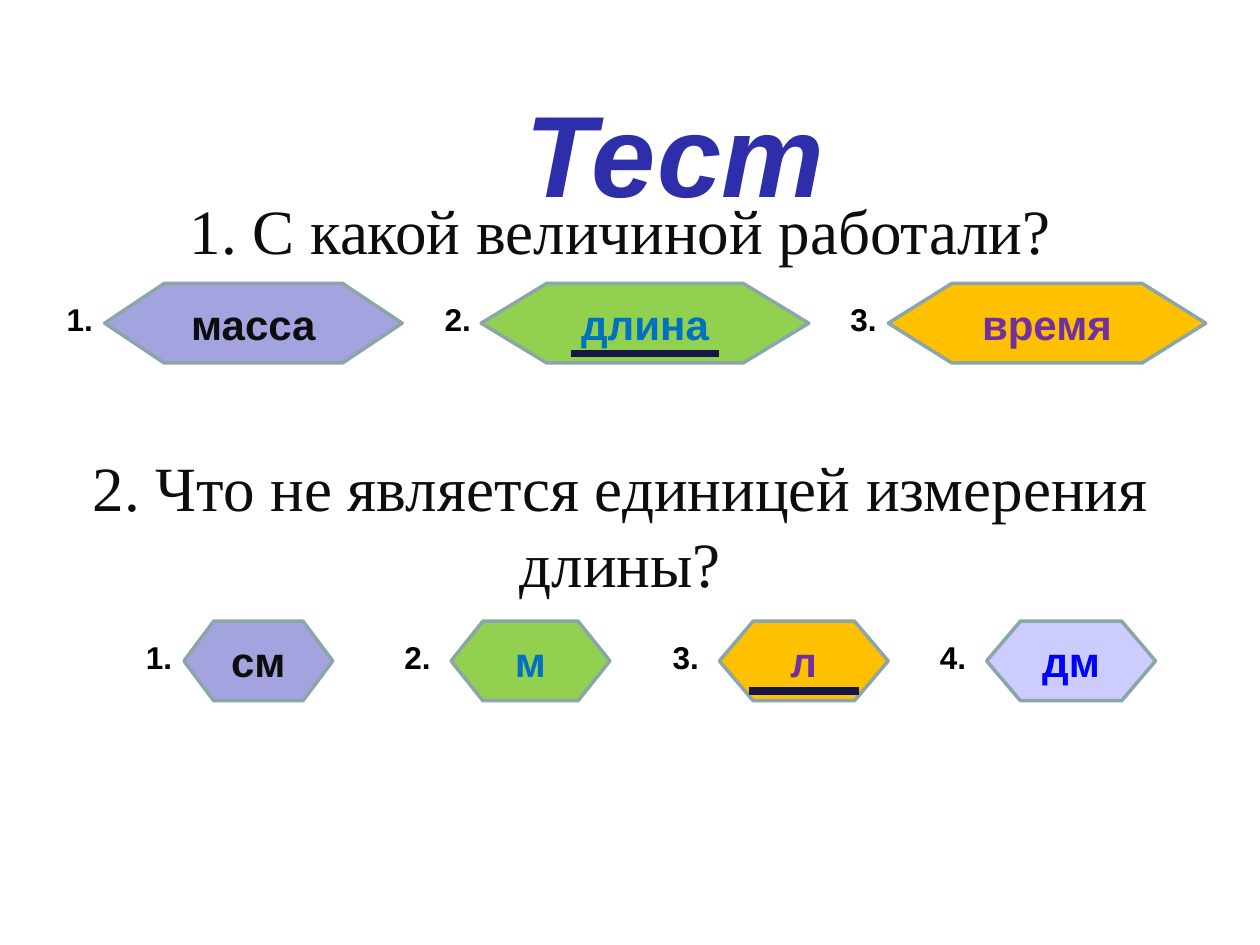
from lxml.etree import SubElement
from pptx import Presentation
from pptx.dml.color import RGBColor
from pptx.enum.shapes import MSO_CONNECTOR, MSO_SHAPE
from pptx.enum.text import MSO_ANCHOR as Anchor, MSO_AUTO_SIZE, PP_ALIGN as Align
from pptx.oxml.ns import qn
from pptx.util import Pt

THEME = {
    "sans": "Arial", "serif": "Times New Roman",
    "title_size": 66, "question_size": 36, "answer_size": 24, "number_size": 18,
    "title": "2E2EAA", "question": "0D0D0D", "number": "000000",
    "outline": "8AA6A8", "underline": "171745",
    "styles": {  # fill, text
        "violet": ("A3A3E0", "0D0D0D"),
        "green": ("92D050", "0070C0"),
        "orange": ("FFC000", "7030A0"),
        "lavender": ("CCCCFF", "0000FF"),
    },
}

TITLE = "Тест"
# Answers: text, style, left, width, number's distance to the left, underline width
QUESTIONS = [
    {"text": "1. С какой величиной работали?", "top": 105.8, "height": 51.1,
     "answers_top": 162,
     "answers": [("масса", "violet", 59.8, 170, 28.8, 0),
                 ("длина", "green", 275, 187.2, 28, 85),
                 ("время", "orange", 507.6, 181.4, 28.8, 0)]},
    {"text": "2. Что не является единицей измерения длины?", "top": 252.7, "height": 94.3,
     "answers_top": 355,
     "answers": [("см", "violet", 105.1, 85, 28.8, 0),
                 ("м", "green", 257.8, 90.7, 33.8, 0),
                 ("л", "orange", 411.1, 96.5, 33.8, 62.6),
                 ("дм", "lavender", 563.8, 96.5, 33.8, 0)]},
]
ANSWER_HEIGHT = 45.4
NUMBER_DROP = 5.8
UNDERLINE_DROP = 40


def color(name):
    return RGBColor.from_string(name)


def write(shape, text, face, size, ink, bold=False, italic=False, align=Align.CENTER):
    shape.text_frame.text = text
    para = shape.text_frame.paragraphs[0]
    para.alignment = align
    font = para.runs[0].font
    font.name, font.size, font.bold, font.italic = face, Pt(size), bold, italic
    font.color.rgb = color(ink)
    return para


def add_box(slide, left, top, width, height):
    box = slide.shapes.add_textbox(Pt(left), Pt(top), Pt(width), Pt(height))
    box.text_frame.word_wrap = True
    box.text_frame.auto_size = MSO_AUTO_SIZE.SHAPE_TO_FIT_TEXT
    return box


def add_title(slide):
    box = add_box(slide, 263.5, 5.8, 244.1, 120.2)
    frame = box.text_frame
    frame.vertical_anchor = Anchor.BOTTOM
    frame.margin_top = frame.margin_bottom = 0
    para = write(box, TITLE, THEME["sans"], THEME["title_size"], THEME["title"], True, True)
    para.line_spacing = 1.5


def add_underline(slide, center, y, width):
    line = slide.shapes.add_connector(MSO_CONNECTOR.STRAIGHT, Pt(center - width / 2), Pt(y),
                                      Pt(center + width / 2), Pt(y))
    line.line.color.rgb = color(THEME["underline"])
    line.line.width = Pt(4.5)
    SubElement(line._element.spPr, qn("a:effectLst"))


def add_answer(slide, number, top, text, style, left, width, gap, underline):
    fill, ink = THEME["styles"][style]
    shape = slide.shapes.add_shape(MSO_SHAPE.FLOWCHART_PREPARATION, Pt(left), Pt(top),
                                   Pt(width), Pt(ANSWER_HEIGHT))
    shape.shadow.inherit = False
    shape.fill.solid()
    shape.fill.fore_color.rgb = color(fill)
    shape.line.color.rgb = color(THEME["outline"])
    shape.line.width = Pt(2)
    shape.text_frame.vertical_anchor = Anchor.MIDDLE
    write(shape, text, THEME["sans"], THEME["answer_size"], ink, bold=True)
    label = add_box(slide, left - gap, top + NUMBER_DROP, 34, 28.8)
    write(label, f"{number}.", THEME["sans"], THEME["number_size"], THEME["number"],
          bold=True, align=Align.LEFT)
    if underline:
        add_underline(slide, left + width / 2, top + UNDERLINE_DROP, underline)


def main():
    deck = Presentation()
    deck.slide_width, deck.slide_height = Pt(720), Pt(540)
    slide = deck.slides.add_slide(deck.slide_layouts[6])
    add_title(slide)
    for question in QUESTIONS:
        box = add_box(slide, 20, question["top"], 669, question["height"])
        write(box, question["text"], THEME["serif"], THEME["question_size"], THEME["question"])
        for number, answer in enumerate(question["answers"], 1):
            add_answer(slide, number, question["answers_top"], *answer)
    deck.save("out.pptx")


if __name__ == "__main__":
    main()
